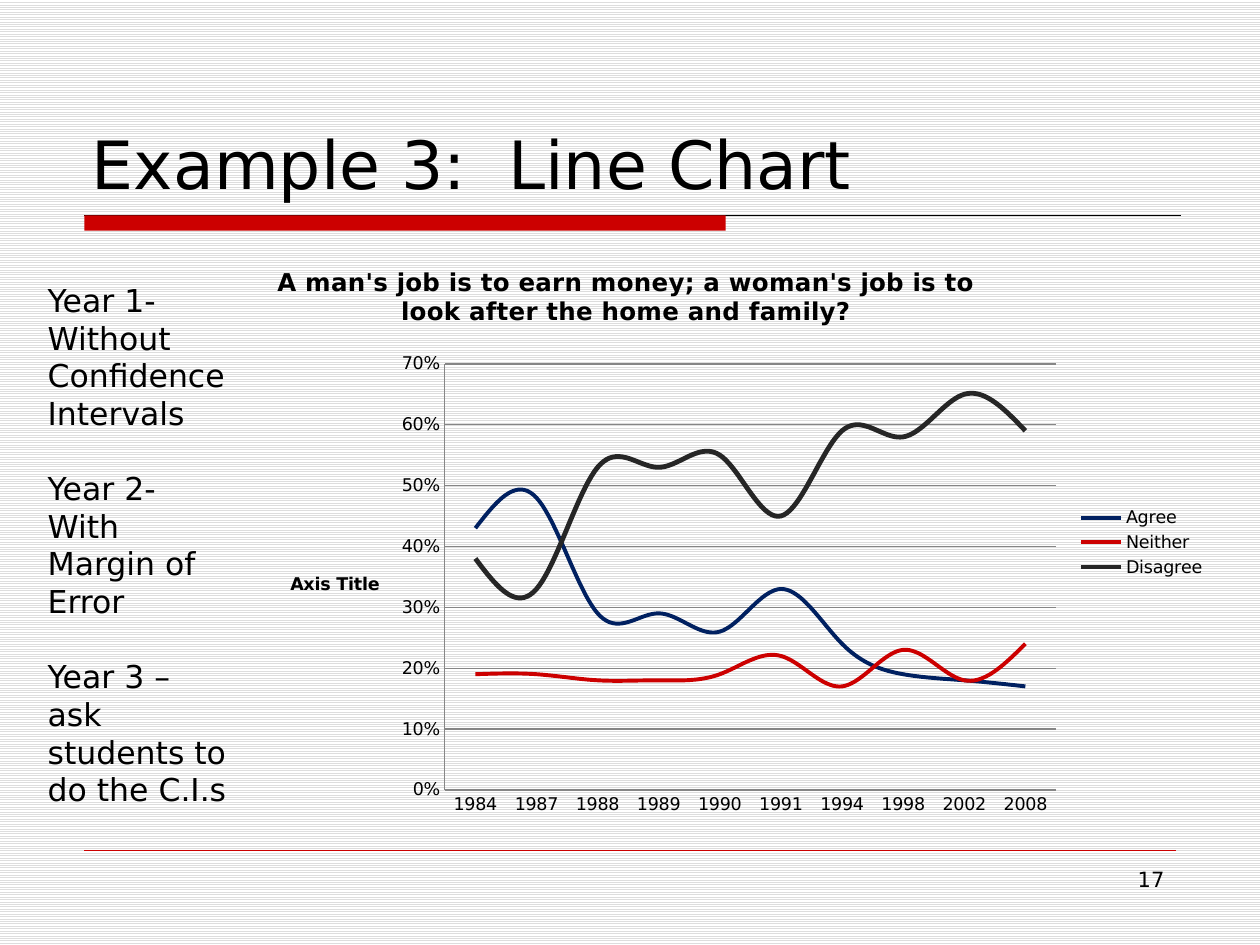
from lxml.etree import SubElement
from pptx import Presentation
from pptx.chart.data import CategoryChartData
from pptx.dml.color import RGBColor
from pptx.enum.chart import XL_CHART_TYPE as ChartType, XL_LEGEND_POSITION as LegendPos, XL_TICK_MARK as TickMark
from pptx.enum.dml import MSO_PATTERN as Pattern
from pptx.enum.shapes import MSO_CONNECTOR as Connector, MSO_SHAPE as Shape
from pptx.enum.text import MSO_ANCHOR as Anchor, MSO_AUTO_SIZE as AutoSize, PP_ALIGN as Align
from pptx.oxml import parse_xml
from pptx.oxml.ns import nsdecls, qn
from pptx.util import Inches, Pt

FONT = "DejaVu Sans"
BLACK, RED, GRID = "000000", "CC0000", "868686"
HEADING = "Example 3:  Line Chart"
PAGE = "17"
YEARLY_TASKS = [
    ["Year 1-", "Without", "Confidence Intervals"],
    ["Year 2-", "With Margin of Error"],
    ["Year 3 – ask students to do the C.I.s"],
]
QUESTION = "A man's job is to earn money; a woman's job is to look after the home and family?"
AXIS_LABEL = "Axis Title"
YEARS = ["1984", "1987", "1988", "1989", "1990", "1991", "1994", "1998", "2002", "2008"]
ANSWERS = [
    ("Agree", "002060", 2.25, [0.43, 0.48, 0.29, 0.29, 0.26, 0.33, 0.24, 0.19, 0.18, 0.17]),
    ("Neither", RED, 2.25, [0.19, 0.19, 0.18, 0.18, 0.19, 0.22, 0.17, 0.23, 0.18, 0.24]),
    ("Disagree", "262626", 2.75, [0.38, 0.33, 0.53, 0.53, 0.55, 0.45, 0.59, 0.58, 0.65, 0.59]),
]


def color(value):
    """Turn a hex string into a colour."""
    return RGBColor.from_string(value)


def set_font(font, size, bold=False):
    """Apply the slide's typeface in black."""
    font.name, font.size, font.bold = FONT, Pt(size), bold
    font.color.rgb = color(BLACK)


def set_line(line, value, width):
    """Give a line its colour and width in points."""
    line.color.rgb, line.width = color(value), Pt(width)


def add_rule(slide, left, right, y, value, width):
    """Draw a horizontal rule without a shadow."""
    rule = slide.shapes.add_connector(
        Connector.STRAIGHT, Inches(left), Inches(y), Inches(right), Inches(y))
    set_line(rule.line, value, width)
    SubElement(rule._element.spPr, qn("a:effectLst"))


def add_text(slide, box, groups, size, align=Align.LEFT):
    """Write groups of paragraphs, with a one-line gap between groups."""
    frame = slide.shapes.add_textbox(*map(Inches, box)).text_frame
    frame.word_wrap = True
    lines = [(text, g > 0 and i == 0) for g, group in enumerate(groups) for i, text in enumerate(group)]
    for n, (text, gap) in enumerate(lines):
        paragraph = frame.add_paragraph() if n else frame.paragraphs[0]
        paragraph.text, paragraph.alignment = text, align
        paragraph.space_before = Pt(size * 1.17 if gap else 0)
        set_font(paragraph.font, size)


def place(element, **fractions):
    """Put a chart part at fractions of the chart's size."""
    modes = '<c:xMode val="edge"/><c:yMode val="edge"/>'
    target = '<c:layoutTarget val="inner"/>' if "w" in fractions else ""
    values = "".join(f'<c:{key} val="{value}"/>' for key, value in fractions.items())
    for old in element.findall(qn("c:layout")):
        element.remove(old)
    layout = parse_xml(f'<c:layout {nsdecls("c")}><c:manualLayout>{target}{modes}{values}'
                       '</c:manualLayout></c:layout>')
    text = element.find(qn("c:tx"))
    element.insert(0 if text is None else 1, layout)


def add_answers_chart(slide):
    """Plot the share of each answer by year."""
    data = CategoryChartData(number_format="0%")
    data.categories = YEARS
    for name, _, _, shares in ANSWERS:
        data.add_series(name, shares)
    chart = slide.shapes.add_chart(
        ChartType.LINE, *map(Inches, (2.09, 2.02, 7.58, 4.57)), data).chart
    set_font(chart.font, 10)

    chart.has_title = True
    chart.chart_title.text_frame.text = QUESTION
    set_font(chart.chart_title.text_frame.paragraphs[0].font, 14, True)
    place(chart.chart_title._element, x=0.01, y=0.01)
    place(chart._chartSpace.chart.plotArea, x=0.19, y=0.19, w=0.64, h=0.74)

    chart.has_legend = True
    chart.legend.position, chart.legend.include_in_layout = LegendPos.RIGHT, False

    for axis in (chart.category_axis, chart.value_axis):
        axis.major_tick_mark = axis.minor_tick_mark = TickMark.NONE
        set_line(axis.format.line, GRID, 0.75)
    shares_axis = chart.value_axis
    shares_axis.minimum_scale, shares_axis.maximum_scale, shares_axis.major_unit = 0, 0.7, 0.1
    shares_axis.tick_labels.number_format = "0%"
    shares_axis.tick_labels.number_format_is_linked = False
    set_line(shares_axis.major_gridlines.format.line, GRID, 0.75)
    label = shares_axis.axis_title.text_frame
    label.text = AXIS_LABEL
    set_font(label.paragraphs[0].font, 10, True)
    label._txBody.bodyPr.set("rot", "0")
    label._txBody.bodyPr.set("vert", "horz")

    chart.plots[0].vary_by_categories = False
    for series, (_, value, width, _) in zip(chart.plots[0].series, ANSWERS):
        series.smooth = True
        set_line(series.format.line, value, width)


def main():
    """Build the slide and save it."""
    deck = Presentation()
    deck.slide_width, deck.slide_height = Inches(10), Inches(7.5)
    slide = deck.slides.add_slide(deck.slide_layouts[5])
    backdrop = slide.background.fill
    backdrop.patterned()
    backdrop.pattern = Pattern.LIGHT_HORIZONTAL
    backdrop.fore_color.rgb, backdrop.back_color.rgb = color("DDDDDD"), color("FFFFFF")

    add_rule(slide, 0.67, 9.37, 1.71, BLACK, 0.75)
    bar = slide.shapes.add_shape(Shape.RECTANGLE, *map(Inches, (0.67, 1.71, 5.09, 0.12)))
    bar.shadow.inherit = False
    bar.fill.solid()
    bar.fill.fore_color.rgb = color(RED)
    bar.line.fill.background()
    add_rule(slide, 0.67, 9.33, 6.75, RED, 0.25)

    title = slide.shapes.title
    title.left, title.top, title.width, title.height = map(Inches, (0.63, 0.33, 8.75, 1.33))
    title.text_frame.text = HEADING
    title.text_frame.auto_size = AutoSize.NONE
    title.text_frame.vertical_anchor = Anchor.BOTTOM
    title.text_frame.paragraphs[0].alignment = Align.LEFT
    set_font(title.text_frame.paragraphs[0].font, 38)

    add_text(slide, (7.17, 6.83, 2.17, 0.52), [[PAGE]], 12, Align.RIGHT)
    add_text(slide, (0.28, 2.18, 1.65, 4.64), YEARLY_TASKS, 18)
    add_answers_chart(slide)
    deck.save("out.pptx")


if __name__ == "__main__":
    main()
